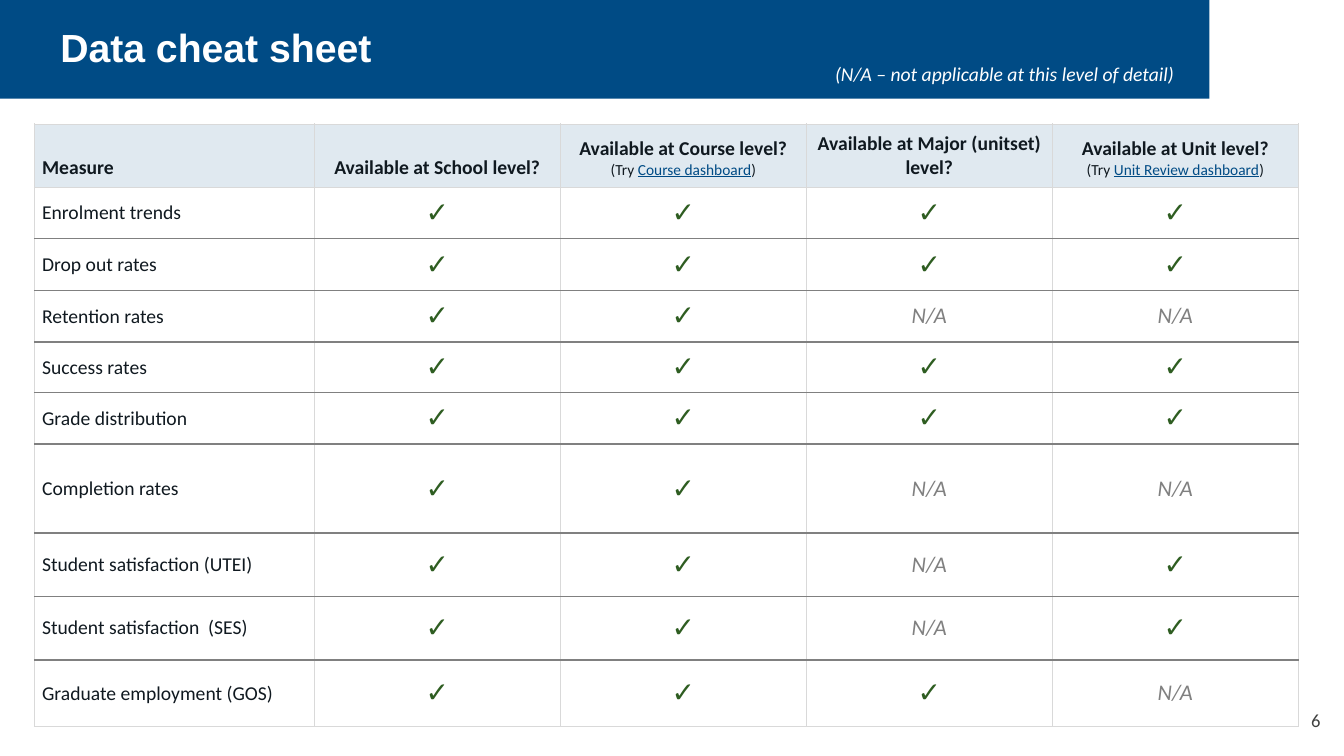
from lxml import etree
from pptx import Presentation
from pptx.dml.color import RGBColor
from pptx.enum.shapes import MSO_SHAPE
from pptx.enum.text import MSO_ANCHOR, PP_ALIGN
from pptx.oxml.ns import qn
from pptx.util import Cm, Pt

LEFT, CENTER, RIGHT = PP_ALIGN.LEFT, PP_ALIGN.CENTER, PP_ALIGN.RIGHT
TOP, MIDDLE, BOTTOM = MSO_ANCHOR.TOP, MSO_ANCHOR.MIDDLE, MSO_ANCHOR.BOTTOM
RECTANGLE = MSO_SHAPE.RECTANGLE

BLUE, WHITE, INK = "004B85", "FFFFFF", "101920"
HEADER_FILL, GREEN, GRAY = "E0E9F0", "2E5D21", "808080"
LIGHT_LINE, ROW_LINE = ("D9D9D9", 0.5), (GRAY, 1)

# Header cells: title and the dashboard to try
HEADERS = [
    ("Measure", None),
    ("Available at School level?", None),
    ("Available at Course level?", "Course dashboard"),
    ("Available at Major (unitset) level?", None),
    ("Available at Unit level?", "Unit Review dashboard"),
]

# Measure, availability at school, course, major and unit level, row height
MEASURES = [
    ("Enrolment trends", "YYYY", 1.3),
    ("Drop out rates", "YYYY", 1.3),
    ("Retention rates", "YYNN", 1.3),
    ("Success rates", "YYYY", 1.27),
    ("Grade distribution", "YYYY", 1.3),
    ("Completion rates", "YYNN", 2.24),
    ("Student satisfaction (UTEI)", "YYNY", 1.6),
    ("Student satisfaction  (SES)", "YYNY", 1.6),
    ("Graduate employment (GOS)", "YYYN", 1.68),
]
MARKS = {
    "Y": ("✓", {"size": 20, "color": GREEN}),
    "N": ("N/A", {"size": 16, "color": GRAY, "italic": True}),
}
HEADER_HEIGHT = 1.6
COLUMN_WIDTHS = [7.06] + [6.2] * 4


def rgb(color):
    return RGBColor.from_string(color)


def add_run(paragraph, text, font="Calibri", size=14, color=INK,
            bold=False, italic=False, underline=False):
    run = paragraph.add_run()
    run.text = text
    run.font.name = font
    run.font.size = Pt(size)
    run.font.color.rgb = rgb(color)
    run.font.bold = bold
    run.font.italic = italic
    run.font.underline = underline


class SlideBuilder:
    def __init__(self, slide):
        self.slide = slide

    def band(self, left, top, width, height, color):
        shape = self.slide.shapes.add_shape(
            RECTANGLE, Cm(left), Cm(top), Cm(width), Cm(height))
        shape.shadow.inherit = False
        shape.fill.solid()
        shape.fill.fore_color.rgb = rgb(color)
        shape.line.fill.background()

    def text(self, left, top, width, height, text, align=LEFT,
             anchor=MIDDLE, line_spacing=1.0, **style):
        box = self.slide.shapes.add_textbox(
            Cm(left), Cm(top), Cm(width), Cm(height))
        frame = box.text_frame
        frame.word_wrap = True
        frame.vertical_anchor = anchor
        paragraph = frame.paragraphs[0]
        paragraph.alignment = align
        paragraph.line_spacing = line_spacing
        add_run(paragraph, text, **style)

    def table(self, left, top, widths, heights):
        frame = self.slide.shapes.add_table(
            len(heights), len(widths), Cm(left), Cm(top),
            Cm(sum(widths)), Cm(sum(heights)))
        table = frame.table
        table.first_row = table.horz_banding = False
        for column, width in zip(table.columns, widths):
            column.width = Cm(width)
        for row, height in zip(table.rows, heights):
            row.height = Cm(height)
        return table

    def cell(self, cell, paragraphs, align, anchor, top_line, bottom_line,
             fill=None):
        cell.margin_left = cell.margin_right = Cm(0.2)
        cell.margin_top = cell.margin_bottom = Cm(0.2)
        cell.vertical_anchor = anchor
        self.borders(cell, L=LIGHT_LINE, R=LIGHT_LINE,
                     T=top_line, B=bottom_line)
        if fill:
            cell.fill.solid()
            cell.fill.fore_color.rgb = rgb(fill)
        else:
            cell.fill.background()
        frame = cell.text_frame
        for index, runs in enumerate(paragraphs):
            paragraph = frame.add_paragraph() if index else frame.paragraphs[0]
            paragraph.alignment = align
            for text, style in runs:
                add_run(paragraph, text, **style)

    def borders(self, cell, **lines):
        properties = cell._tc.get_or_add_tcPr()
        for side, (color, width) in lines.items():
            line = etree.SubElement(
                properties, qn(f"a:ln{side}"), w=str(Pt(width)))
            fill = etree.SubElement(line, qn("a:solidFill"))
            etree.SubElement(fill, qn("a:srgbClr"), val=color)


def main():
    presentation = Presentation()
    presentation.slide_width = Cm(33.87)
    presentation.slide_height = Cm(19.05)
    slide = presentation.slides.add_slide(presentation.slide_layouts[6])
    builder = SlideBuilder(slide)

    # Title band and page number
    builder.band(0, 0, 30.48, 2.49, BLUE)
    builder.text(31.75, 17.73, 1.78, 0.84, "6", align=RIGHT, anchor=TOP,
                 size=13.3, color="404140")
    builder.text(1.27, 0, 29.21, 2.49, "Data cheat sheet", line_spacing=0.9,
                 font="Arial", size=28, color=WHITE, bold=True)

    # Availability table
    heights = [HEADER_HEIGHT] + [height for _, _, height in MEASURES]
    table = builder.table(0.86, 3.12, COLUMN_WIDTHS, heights)

    # Header row
    for column, (title, dashboard) in enumerate(HEADERS):
        paragraphs = [[(title, {"bold": True})]]
        if dashboard:
            paragraphs.append([
                ("(Try ", {"size": 11}),
                (dashboard, {"size": 11, "color": BLUE, "underline": True}),
                (")", {"size": 11}),
            ])
        builder.cell(table.cell(0, column), paragraphs,
                     CENTER if column else LEFT, BOTTOM,
                     LIGHT_LINE, LIGHT_LINE, HEADER_FILL)

    # Measure rows
    for row, (measure, levels, _) in enumerate(MEASURES, start=1):
        top_line = LIGHT_LINE if row == 1 else ROW_LINE
        bottom_line = LIGHT_LINE if row == len(MEASURES) else ROW_LINE
        entries = [(measure, {})] + [MARKS[level] for level in levels]
        for column, entry in enumerate(entries):
            builder.cell(table.cell(row, column), [[entry]],
                         CENTER if column else LEFT, MIDDLE,
                         top_line, bottom_line)

    # Explanation of N/A
    builder.text(20.75, 1.42, 9.14, 0.86,
                 "(N/A – not applicable at this level of detail)",
                 align=CENTER, color=WHITE, italic=True)

    presentation.save("out.pptx")


if __name__ == "__main__":
    main()
